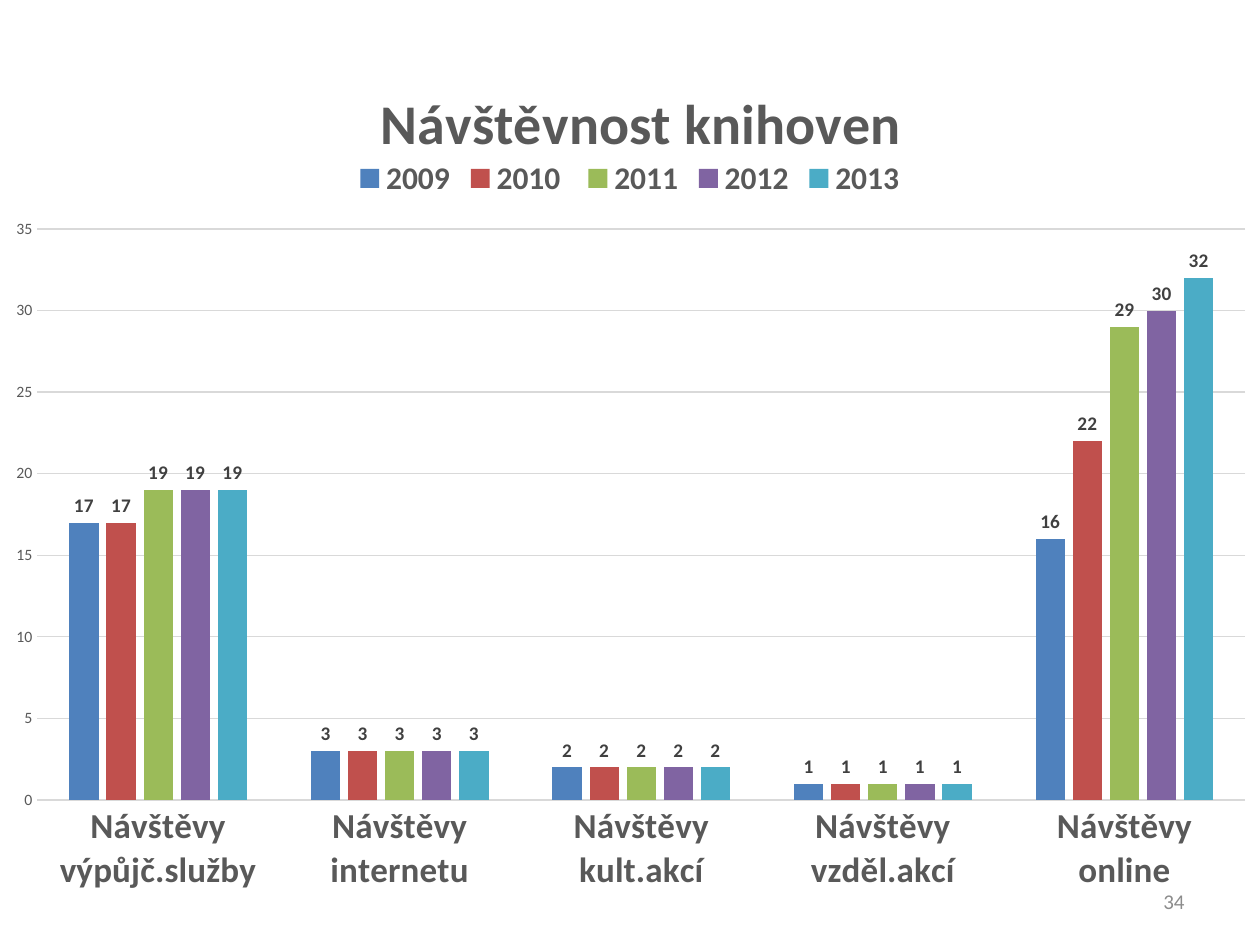
import pptx
import pptx.util
import pptx.chart.data
import pptx.dml.color
import pptx.enum.chart
import pptx.enum.text
import pptx.oxml
import pptx.oxml.ns

RGB = pptx.dml.color.RGBColor
Pt = pptx.util.Pt
qn = pptx.oxml.ns.qn
SCALE = 914400 / 126
FONT = "Calibri"

BLACK = RGB(0x00, 0x00, 0x00)
DARK = RGB(0x40, 0x40, 0x40)
GRAY = RGB(0x59, 0x59, 0x59)
PALE = RGB(0x8C, 0x8C, 0x8C)
RULE = RGB(0xD9, 0xD9, 0xD9)
BLUE = RGB(0x4F, 0x81, 0xBD)
RED = RGB(0xC0, 0x50, 0x4D)
GREEN = RGB(0x9B, 0xBB, 0x59)
PURPLE = RGB(0x80, 0x64, 0xA2)
TEAL = RGB(0x4B, 0xAC, 0xC6)

FRAME = (-10, 37, 1281, 873)
CATS = ["Návštěvy výpůjč.služby", "Návštěvy internetu", "Návštěvy kult.akcí",
        "Návštěvy vzděl.akcí", "Návštěvy online"]
YEARS = [
    ("2009", (17, 3, 2, 1, 16), BLUE),
    ("2010 ", (17, 3, 2, 1, 22), RED),
    ("2011", (19, 3, 2, 1, 29), GREEN),
    ("2012", (19, 3, 2, 1, 30), PURPLE),
    ("2013", (19, 3, 2, 1, 32), TEAL),
]


def px(num):
    return round(num * SCALE)


class Deck:
    def __init__(self, wide, high):
        self.show = pptx.Presentation()
        self.show.slide_width, self.show.slide_height = px(wide), px(high)
        self.slide = self.show.slides.add_slide(self.show.slide_layouts[6])

    def style(self, font, size, color, bold=False):
        font.name, font.size, font.bold = FONT, Pt(size), bold
        font.color.rgb = color

    def text(self, box, words, size, color, align):
        frame = self.slide.shapes.add_textbox(*map(px, box)).text_frame
        frame.word_wrap = True
        frame.vertical_anchor = pptx.enum.text.MSO_ANCHOR.MIDDLE
        para = frame.paragraphs[0]
        para.alignment = align
        run = para.add_run()
        run.text = words
        self.style(run.font, size, color)

    def chart(self, box, cats, rows):
        data = pptx.chart.data.CategoryChartData(number_format="0")
        data.categories = cats
        for name, vals, _ in rows:
            data.add_series(name, vals)
        kind = pptx.enum.chart.XL_CHART_TYPE.COLUMN_CLUSTERED
        chart = self.slide.shapes.add_chart(kind, *map(px, box), data).chart
        self.style(chart.font, 10, BLACK)
        plot = chart.plots[0]
        plot.gap_width, plot.overlap = 219, -27
        plot.vary_by_categories = False
        for row, (_, _, color) in zip(plot.series, rows):
            self.bars(row, color)
        return chart

    def bars(self, row, color):
        row.format.fill.solid()
        row.format.fill.fore_color.rgb = color
        row.invert_if_negative = False
        tags = row.data_labels
        tags.show_value = True
        tags.number_format, tags.number_format_is_linked = "0", False
        tags.position = pptx.enum.chart.XL_LABEL_POSITION.OUTSIDE_END
        self.style(tags.font, 11, DARK, True)

    def axis(self, axis, size, bold=False):
        none = pptx.enum.chart.XL_TICK_MARK.NONE
        axis.major_tick_mark = axis.minor_tick_mark = none
        self.style(axis.tick_labels.font, size, GRAY, bold)

    def rule(self, line):
        line.color.rgb = RULE
        line.width = Pt(0.75)

    def title(self, chart, words, size):
        run = chart.chart_title.text_frame.paragraphs[0].add_run()
        run.text = words
        self.style(run.font, size, GRAY, True)
        chart.chart_title.include_in_layout = False

    def legend(self, chart, size):
        chart.has_legend = True
        chart.legend.position = pptx.enum.chart.XL_LEGEND_POSITION.TOP
        chart.legend.include_in_layout = False
        self.style(chart.legend.font, size, GRAY, True)

    def place(self, part, after, left, top, wide=0, high=0):
        """Pin a chart part at a slide position, as shares of the frame."""
        for old in part.findall(qn("c:layout")):
            part.remove(old)
        x, y, w, h = FRAME
        rules = [("xMode", "edge"), ("yMode", "edge"),
                 ("x", round((left - x) / w, 3)), ("y", round((top - y) / h, 3))]
        if wide:
            rules += [("w", round(wide / w, 3)), ("h", round(high / h, 3))]
        if after is None:
            rules.insert(0, ("layoutTarget", "inner"))
        body = "".join(f'<c:{key} val="{val}"/>' for key, val in rules)
        node = pptx.oxml.parse_xml(
            f'<c:layout {pptx.oxml.ns.nsdecls("c")}>'
            f'<c:manualLayout>{body}</c:manualLayout></c:layout>')
        if after is None:
            part.insert(0, node)
        else:
            part.find(qn(after)).addnext(node)


def main():
    deck = Deck(1260, 945)

    # Column chart
    chart = deck.chart(FRAME, CATS, YEARS)
    deck.title(chart, "Návštěvnost knihoven", 32)
    deck.legend(chart, 18)

    # Axes and grid
    cat, val = chart.category_axis, chart.value_axis
    deck.axis(cat, 20, True)
    deck.rule(cat.format.line)
    deck.axis(val, 9)
    val.format.line.fill.background()
    val.minimum_scale, val.maximum_scale, val.major_unit = 0, 35, 5
    val.tick_labels.number_format = "0"
    val.tick_labels.number_format_is_linked = False
    deck.rule(val.major_gridlines.format.line)

    # Positions inside the chart
    head = chart.chart_title._element
    deck.place(head, "c:tx", 370, 74)
    deck.place(chart.legend._element, "c:legendPos", 350, 158, 560, 40)
    deck.place(head.getparent().find(qn("c:plotArea")), None, 37, 229, 1208, 571)

    # Slide number
    deck.text((903, 876, 294, 50), "34", 12, PALE, pptx.enum.text.PP_ALIGN.RIGHT)

    deck.show.save("out.pptx")


if __name__ == "__main__":
    main()
